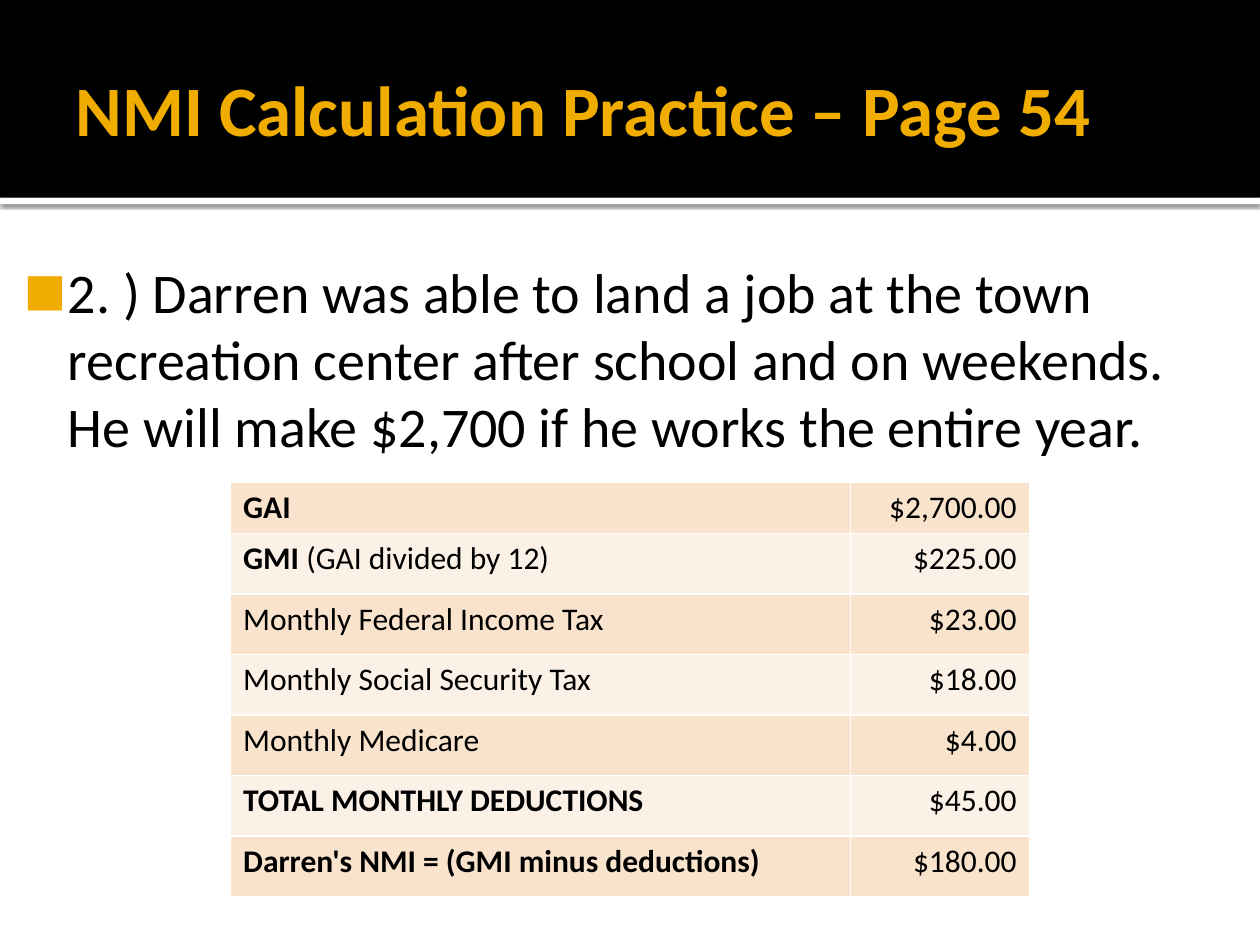
from dataclasses import dataclass

from lxml import etree
from pptx import Presentation
from pptx import util as u
from pptx.dml.color import RGBColor
from pptx.enum import shapes, text
from pptx.oxml import parse_xml
from pptx.oxml.ns import nsdecls, qn


@dataclass(frozen=True)
class Theme:
    font: str = "Calibri"
    ink: str = "000000"
    paper: str = "FFFFFF"
    accent: str = "F0AD00"
    bands: tuple = ("F9E3CC", "FCF1E7")
    title_size: float = 40.5
    body_size: float = 32
    table_size: float = 18


THEME = Theme()
WIDTH, HEIGHT = 10, 7.5
TITLE = "NMI Calculation Practice – Page 54"
QUESTION = (
    "2. ) Darren was able to land a job at the town recreation center after "
    "school and on weekends. He will make $2,700 if he works the entire year."
)
ROWS = [
    ("GAI", "", "$2,700.00"),
    ("GMI", " (GAI divided by 12)", "$225.00"),
    ("", "Monthly Federal Income Tax", "$23.00"),
    ("", "Monthly Social Security Tax", "$18.00"),
    ("", "Monthly Medicare", "$4.00"),
    ("TOTAL MONTHLY DEDUCTIONS", "", "$45.00"),
    ("Darren's NMI = (GMI minus deductions)", "", "$180.00"),
]
HEADER_HEIGHT, STRIPE_HEIGHT = 1.57, 0.05
TABLE_LEFT, TABLE_TOP = 1.83, 3.83
COLUMNS = (4.92, 1.42)
FIRST_ROW, OTHER_ROWS = 0.4, 0.48


def inches(*values):
    return [u.Inches(value) for value in values]


def write(para, words, size, color=THEME.ink, bold=False, align=text.PP_ALIGN.LEFT):
    para.alignment = align
    span = para.add_run()
    span.text = words
    span.font.name = THEME.font
    span.font.size = u.Pt(size)
    span.font.bold = bold
    span.font.color.rgb = RGBColor.from_string(color)


def set_frame(frame, insets, anchor):
    frame.word_wrap = True
    frame.auto_size = text.MSO_AUTO_SIZE.NONE
    frame.vertical_anchor = anchor
    (frame.margin_left, frame.margin_top,
     frame.margin_right, frame.margin_bottom) = inches(*insets)


def add_band(page, top, height, color):
    band = page.shapes.add_shape(
        shapes.MSO_SHAPE.RECTANGLE, *inches(0, top, WIDTH, height))
    band.shadow.inherit = False
    band.fill.solid()
    band.fill.fore_color.rgb = RGBColor.from_string(color)
    band.line.fill.background()
    return band


def add_shadow(shape):
    effects = shape._element.spPr.find(qn("a:effectLst"))
    effects.append(parse_xml(
        f'<a:outerShdw {nsdecls("a")} blurRad="{u.Pt(2.5)}" dist="{u.Pt(0.8)}" '
        f'dir="5400000" rotWithShape="0"><a:srgbClr val="{THEME.ink}">'
        '<a:alpha val="60000"/></a:srgbClr></a:outerShdw>'))


def add_bullet(para):
    props = para._p.get_or_add_pPr()
    props.set("marL", str(u.Inches(0.48)))
    props.set("indent", str(u.Inches(-0.35)))
    color = etree.SubElement(props, qn("a:buClr"))
    etree.SubElement(color, qn("a:srgbClr"), val=THEME.accent)
    etree.SubElement(props, qn("a:buSzPct"), val="80000")
    etree.SubElement(props, qn("a:buFont"), typeface=THEME.font)
    etree.SubElement(props, qn("a:buChar"), char="■")


def style_cell(cell, color):
    cell.fill.solid()
    cell.fill.fore_color.rgb = RGBColor.from_string(color)
    props = cell._tc.get_or_add_tcPr()
    for index, side in enumerate(("lnL", "lnR", "lnT", "lnB")):
        props.insert(index, parse_xml(
            f'<a:{side} {nsdecls("a")} w="{u.Pt(1)}"><a:solidFill>'
            f'<a:srgbClr val="{THEME.paper}"/></a:solidFill></a:{side}>'))


def add_header(page):
    add_shadow(add_band(page, HEADER_HEIGHT, STRIPE_HEIGHT, THEME.paper))
    add_band(page, 0, HEADER_HEIGHT, THEME.ink)
    title = page.shapes.title
    title.left, title.top, title.width, title.height = inches(0.5, 0.17, 9, 1.37)
    set_frame(title.text_frame, (0.1, 0.05, 0.05, 0.05), text.MSO_ANCHOR.MIDDLE)
    write(title.text_frame.paragraphs[0], TITLE, THEME.title_size,
          color=THEME.accent, bold=True)
    page.shapes._spTree.append(title._element)


def add_question(page):
    box = page.shapes.add_textbox(*inches(0, 1.94, 9.67, 5.06))
    set_frame(box.text_frame, (0.06, 0.1, 0.1, 0.05), text.MSO_ANCHOR.TOP)
    para = box.text_frame.paragraphs[0]
    write(para, QUESTION, THEME.body_size)
    para.space_before = u.Pt(0)
    add_bullet(para)


def add_budget(page):
    heights = [FIRST_ROW] + [OTHER_ROWS] * (len(ROWS) - 1)
    table = page.shapes.add_table(
        len(ROWS), len(COLUMNS),
        *inches(TABLE_LEFT, TABLE_TOP, sum(COLUMNS), sum(heights))).table
    table.first_row = table.horz_banding = False
    for column, width in zip(table.columns, COLUMNS):
        column.width = u.Inches(width)
    for index, (strong, plain, amount) in enumerate(ROWS):
        table.rows[index].height = u.Inches(heights[index])
        label, value = table.rows[index].cells
        for cell in (label, value):
            style_cell(cell, THEME.bands[index % 2])
        for words, bold in ((strong, True), (plain, False)):
            if words:
                write(label.text_frame.paragraphs[0], words, THEME.table_size, bold=bold)
        write(value.text_frame.paragraphs[0], amount, THEME.table_size,
              align=text.PP_ALIGN.RIGHT)


def main():
    deck = Presentation()
    deck.slide_width, deck.slide_height = inches(WIDTH, HEIGHT)
    page = deck.slides.add_slide(deck.slide_layouts[5])
    add_header(page)
    add_question(page)
    add_budget(page)
    deck.save("out.pptx")


if __name__ == "__main__":
    main()
